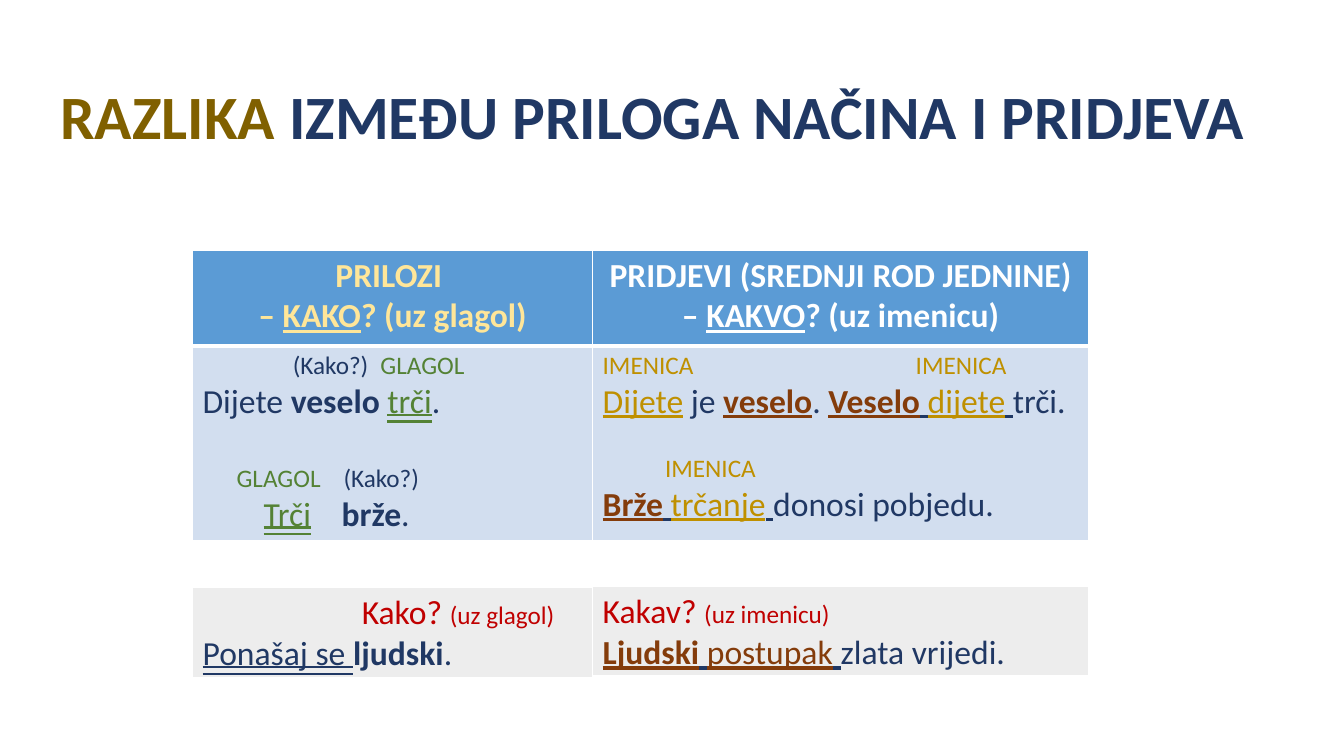
from dataclasses import dataclass

from lxml import etree
from pptx import Presentation
from pptx.dml.color import RGBColor
from pptx.enum import text as text_enum
from pptx.oxml import ns
from pptx.util import Pt

FONT = "Calibri"
COLORS = {
    "white": "FFFFFF", "navy": "203864", "olive": "806000", "cream": "FFE699",
    "green": "548235", "gold": "BF9000", "brown": "843C0B", "red": "C00000",
    "header": "5B9BD5", "body": "D2DEEF", "example": "EDEDED",
}
LEFT = 137.5
ADVERB_WIDTH, ADJECTIVE_WIDTH = 285.8, 354.3
SMALL, LARGE = 18, 24
SINGLE = text_enum.MSO_UNDERLINE.SINGLE_LINE
DOUBLE = text_enum.MSO_UNDERLINE.DOUBLE_LINE


@dataclass
class Span:
    text: str
    color: str = "navy"
    size: float = LARGE
    bold: bool = False
    underline: text_enum.MSO_UNDERLINE = text_enum.MSO_UNDERLINE.NONE


@dataclass
class Line:
    spans: list[Span]
    tabs: tuple[float, ...] = ()
    before: float = 0
    spacing: float = 1
    centered: bool = False


@dataclass
class Cell:
    lines: list[Line]
    fill: str
    bottom: float = 1


@dataclass
class Grid:
    left: float
    top: float
    widths: list[float]
    heights: list[float]
    rows: list[list[Cell]]


def styled(text: str, **style) -> Span:
    return Span(text, **style)


def label(text: str, color: str) -> Span:
    return styled(text, color=color, size=SMALL)


def marked(text: str, color: str = "navy", bold: bool = False) -> Span:
    return styled(text, color=color, bold=bold, underline=SINGLE)


def verb(text: str, color: str = "green") -> Span:
    return styled(text, color=color, underline=DOUBLE)


def heading(text: str, color: str, underline: bool = False) -> Span:
    return Span(text, color, bold=True,
                underline=SINGLE if underline else text_enum.MSO_UNDERLINE.NONE)


def write_lines(frame, lines: list[Line]) -> None:
    for index, line in enumerate(lines):
        para = frame.paragraphs[0] if index == 0 else frame.add_paragraph()
        para.alignment = (text_enum.PP_ALIGN.CENTER if line.centered
                          else text_enum.PP_ALIGN.LEFT)
        para.line_spacing = line.spacing
        para.space_before = Pt(line.before)
        if line.tabs:
            stops = etree.SubElement(para._p.get_or_add_pPr(), ns.qn("a:tabLst"))
            for position in line.tabs:
                etree.SubElement(stops, ns.qn("a:tab"), pos=str(Pt(position)), algn="l")
        for span in line.spans:
            run = para.add_run()
            run.text = span.text
            font = run.font
            font.name, font.size = FONT, Pt(span.size)
            font.bold, font.underline = span.bold, span.underline
            font.color.rgb = RGBColor.from_string(COLORS[span.color])


def draw_borders(cell, bottom: float) -> None:
    properties = cell._tc.get_or_add_tcPr()
    widths = {"lnL": 1, "lnR": 1, "lnT": 1, "lnB": bottom}
    for index, (side, width) in enumerate(widths.items()):
        border = etree.Element(ns.qn(f"a:{side}"), w=str(Pt(width)))
        fill = etree.SubElement(border, ns.qn("a:solidFill"))
        etree.SubElement(fill, ns.qn("a:srgbClr"), val=COLORS["white"])
        properties.insert(index, border)


def draw_grid(page, grid: Grid) -> None:
    table = page.shapes.add_table(
        len(grid.heights), len(grid.widths), Pt(grid.left), Pt(grid.top),
        Pt(sum(grid.widths)), Pt(sum(grid.heights))).table
    table.first_row = table.horz_banding = False
    for column, width in zip(table.columns, grid.widths):
        column.width = Pt(width)
    for row, height, contents in zip(table.rows, grid.heights, grid.rows):
        row.height = Pt(height)
        for cell, content in zip(row.cells, contents):
            cell.fill.solid()
            cell.fill.fore_color.rgb = RGBColor.from_string(COLORS[content.fill])
            draw_borders(cell, content.bottom)
            write_lines(cell.text_frame, content.lines)


def draw_title(page) -> None:
    box = page.shapes.add_textbox(Pt(36), Pt(33.1), Pt(870), Pt(104.4))
    box.text_frame.word_wrap = True
    box.text_frame.vertical_anchor = text_enum.MSO_ANCHOR.MIDDLE
    write_lines(box.text_frame, [Line([
        Span("RAZLIKA", "olive", 44, True),
        Span(" IZMEĐU PRILOGA NAČINA I PRIDJEVA", size=44, bold=True)], spacing=0.9)])


ADVERB_HEADER = Cell([
    Line([heading("PRILOZI ", "cream")], centered=True),
    Line([heading("– ", "cream"), heading("KAKO", "cream", True),
          heading("? (uz glagol)", "cream")], centered=True),
], "header", bottom=3)
ADJECTIVE_HEADER = Cell([
    Line([heading("PRIDJEVI (SREDNJI ROD JEDNINE) – ", "white"),
          heading("KAKVO", "white", True),
          heading("? (uz imenicu)", "white")], centered=True),
], "header", bottom=3)
ADVERB_BODY = Cell([
    Line([label("\t(Kako?)", "navy"), label("\tGLAGOL", "green")], tabs=(64.5, 127)),
    Line([Span("Dijete "), Span("veselo ", bold=True), verb("trči"), Span(".")]),
    Line([label("\tGLAGOL", "green"), label("\t(Kako?)", "navy")],
         tabs=(24.3, 100.7), before=29.3),
    Line([Span("\t"), verb("Trči"), Span("\t"), Span("brže", bold=True), Span(".")],
         tabs=(43.6, 99.3)),
], "body")
ADJECTIVE_BODY = Cell([
    Line([label("IMENICA\tIMENICA", "gold")], tabs=(223.6,)),
    Line([marked("Dijete", "gold"), Span(" je "), marked("veselo", "brown", True),
          Span(". "), marked("Veselo", "brown", True), marked(" "),
          marked("dijete", "gold"), marked(" "), Span("trči.")]),
    Line([label("\tIMENICA", "gold")], tabs=(44.6,), before=22),
    Line([marked("Brže", "brown", True), marked(" "), marked("trčanje", "gold"),
          marked(" "), Span("donosi pobjedu.")]),
], "body")
ADVERB_EXAMPLE = Cell([
    Line([Span("\tKako? ", "red"), label("(uz glagol)", "red")], tabs=(113.7,)),
    Line([verb("Ponašaj se ", "navy"), Span("ljudski", bold=True), Span(".")]),
], "example", bottom=3)
ADJECTIVE_EXAMPLE = Cell([
    Line([Span("Kakav? ", "red"), label("(uz imenicu)", "red")]),
    Line([marked("Ljudski", "brown", True), marked(" ", bold=True),
          marked("postupak", "brown"), marked(" "), Span("zlata vrijedi.")]),
], "example", bottom=3)

GRIDS = [
    Grid(LEFT, 178.6, [ADVERB_WIDTH, ADJECTIVE_WIDTH], [68.4, 139],
         [[ADVERB_HEADER, ADJECTIVE_HEADER], [ADVERB_BODY, ADJECTIVE_BODY]]),
    Grid(LEFT, 419.8, [ADVERB_WIDTH], [64.8], [[ADVERB_EXAMPLE]]),
    Grid(LEFT + ADVERB_WIDTH, 419, [ADJECTIVE_WIDTH], [64.8], [[ADJECTIVE_EXAMPLE]]),
]


def main() -> None:
    deck = Presentation()
    deck.slide_width, deck.slide_height = Pt(960), Pt(540)
    page = deck.slides.add_slide(deck.slide_layouts[6])
    draw_title(page)
    for grid in GRIDS:
        draw_grid(page, grid)
    deck.save("out.pptx")


if __name__ == "__main__":
    main()
